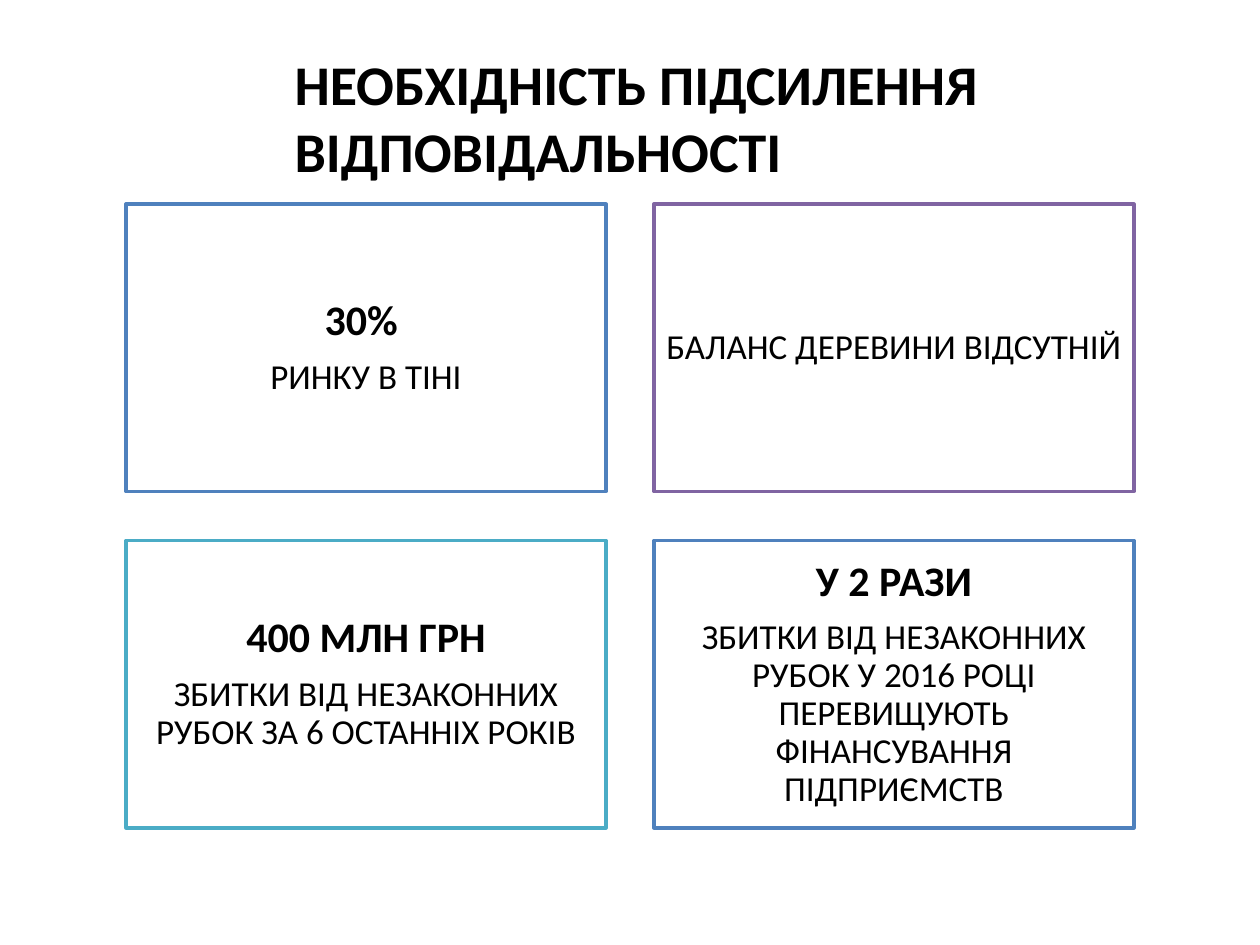
import dataclasses

import pptx
import pptx.dml.color
import pptx.enum.shapes
import pptx.enum.text
import pptx.util

Inches = pptx.util.Inches
Pt = pptx.util.Pt
Align = pptx.enum.text.PP_ALIGN


@dataclasses.dataclass(frozen=True)
class Theme:
    font: str = "Calibri"
    ink: str = "000000"
    paper: str = "FFFFFF"
    blue: str = "4F81BD"
    violet: str = "8064A2"
    teal: str = "4BACC6"
    title: int = 32
    figure: int = 24
    body: int = 20
    border: int = 2


THEME = Theme()

# Card grid, in inches
LEFT, TOP = 1, 1.62
WIDTH, HEIGHT = 3.81, 2.28
GAP_X, GAP_Y = 0.38, 0.39
COLS = 2

# Border colour, inset, figure (may be empty), caption
CARDS = [
    (THEME.blue, 0.1, "30% ", "РИНКУ В ТІНІ"),
    (THEME.violet, 0.08, "", "БАЛАНС ДЕРЕВИНИ ВІДСУТНІЙ"),
    (THEME.teal, 0.1, "400 МЛН ГРН",
     "ЗБИТКИ ВІД НЕЗАКОННИХ РУБОК ЗА 6 ОСТАННІХ РОКІВ"),
    (THEME.blue, 0.1, "У 2 РАЗИ",
     "ЗБИТКИ ВІД НЕЗАКОННИХ РУБОК У 2016 РОЦІ ПЕРЕВИЩУЮТЬ "
     "ФІНАНСУВАННЯ ПІДПРИЄМСТВ"),
]


def color(code):
    return pptx.dml.color.RGBColor.from_string(code)


def add_run(para, text, size, bold=False):
    run = para.add_run()
    run.text = text
    font = run.font
    font.name, font.size, font.bold = THEME.font, Pt(size), bold
    font.color.rgb = color(THEME.ink)


def set_frame(frame):
    frame.word_wrap = True
    frame.vertical_anchor = pptx.enum.text.MSO_ANCHOR.MIDDLE


def add_title(slide, text):
    box = slide.shapes.add_textbox(
        Inches(2.24), Inches(0.3), Inches(7.26), Inches(1.25))
    set_frame(box.text_frame)
    para = box.text_frame.paragraphs[0]
    para.alignment = Align.LEFT
    add_run(para, text, THEME.title, bold=True)


def add_card(slide, left, top, border, inset, figure, caption):
    card = slide.shapes.add_shape(
        pptx.enum.shapes.MSO_SHAPE.RECTANGLE,
        Inches(left), Inches(top), Inches(WIDTH), Inches(HEIGHT))
    card.shadow.inherit = False
    card.fill.solid()
    card.fill.fore_color.rgb = color(THEME.paper)
    card.line.color.rgb = color(border)
    card.line.width = Pt(THEME.border)

    # Text with equal insets on every side
    frame = card.text_frame
    set_frame(frame)
    frame.margin_left = frame.margin_right = Inches(inset)
    frame.margin_top = frame.margin_bottom = Inches(inset)
    lines = [(caption, THEME.body, False)]
    if figure:
        lines.insert(0, (figure, THEME.figure, True))
    for i, (text, size, bold) in enumerate(lines):
        para = frame.add_paragraph() if i else frame.paragraphs[0]
        para.alignment = Align.CENTER
        para.line_spacing = 0.9
        para.space_after = Pt(0.35 * size)
        add_run(para, text, size, bold)


def main():
    deck = pptx.Presentation()
    deck.slide_width, deck.slide_height = Inches(10), Inches(7.5)
    slide = deck.slides.add_slide(deck.slide_layouts[6])

    # Heading
    add_title(slide, "НЕОБХІДНІСТЬ ПІДСИЛЕННЯ ВІДПОВІДАЛЬНОСТІ")

    # Cards, row by row
    for i, card in enumerate(CARDS):
        row, col = divmod(i, COLS)
        add_card(slide, LEFT + col * (WIDTH + GAP_X),
                 TOP + row * (HEIGHT + GAP_Y), *card)

    deck.save("out.pptx")


if __name__ == "__main__":
    main()
